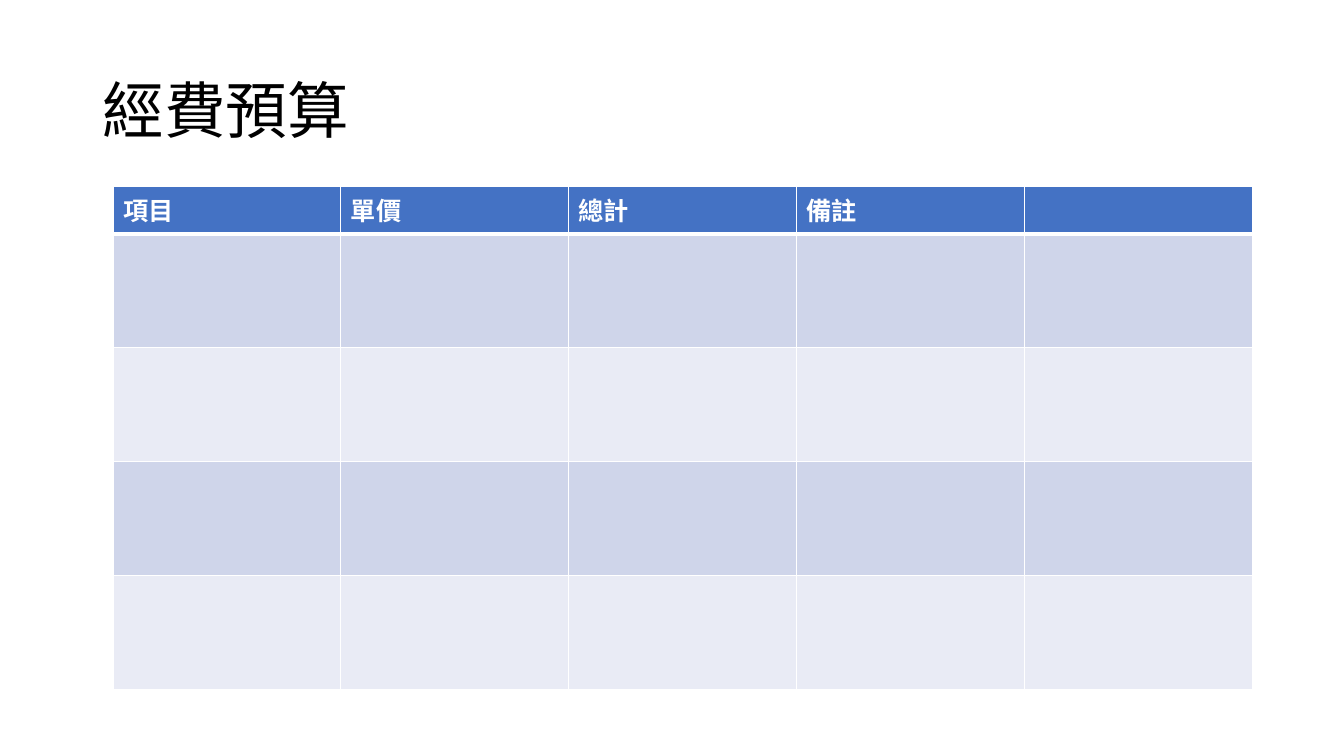
from dataclasses import dataclass

from lxml import etree
from pptx import Presentation
from pptx import util as u
from pptx.dml.color import RGBColor
from pptx.enum import text
from pptx.oxml import ns


@dataclass(frozen=True)
class Theme:
    font: str = "Calibri"
    title_size: int = 44
    table_size: int = 18
    ink: str = "000000"
    white: str = "FFFFFF"
    header_fill: str = "4472C4"
    band_fills: tuple = ("CFD5EA", "E9EBF5")
    thin_rule: int = 1
    header_rule: int = 3


class BudgetSlide:
    def __init__(self, slide, theme):
        self.slide = slide
        self.theme = theme

    def add_run(self, paragraph, wording, size, color, bold=False):
        run = paragraph.add_run()
        run.text = wording
        run.font.name = self.theme.font
        run.font.size = u.Pt(size)
        run.font.bold = bold
        run.font.color.rgb = RGBColor.from_string(color)

    def add_title(self, wording, left, top, width, height):
        box = self.slide.shapes.add_textbox(
            u.Inches(left), u.Inches(top), u.Inches(width), u.Inches(height))
        frame = box.text_frame
        frame.word_wrap = True
        frame.vertical_anchor = text.MSO_ANCHOR.MIDDLE
        heading = frame.paragraphs[0]
        heading.line_spacing = 0.9
        self.add_run(heading, wording, self.theme.title_size, self.theme.ink)

    def add_border(self, cell, side, points):
        """Rule one side of a cell; side is L, R, T or B, in that order."""
        line = etree.SubElement(cell._tc.get_or_add_tcPr(), ns.qn(f"a:ln{side}"),
                                w=str(u.Pt(points)))
        fill = etree.SubElement(line, ns.qn("a:solidFill"))
        etree.SubElement(fill, ns.qn("a:srgbClr"), val=self.theme.white)

    def style_cell(self, cell, row):
        """Borders go in before the fill, as the schema orders them."""
        theme = self.theme
        rules = {side: theme.thin_rule for side in "LRTB"}
        if row < 2:
            rules["B" if row == 0 else "T"] = theme.header_rule
        for side, points in rules.items():
            self.add_border(cell, side, points)
        color = theme.band_fills[(row - 1) % 2] if row else theme.header_fill
        cell.fill.solid()
        cell.fill.fore_color.rgb = RGBColor.from_string(color)

    def add_budget_table(self, headings, left, top, column_width, row_heights):
        budget = self.slide.shapes.add_table(
            len(row_heights), len(headings), u.Inches(left), u.Inches(top),
            u.Inches(column_width * len(headings)),
            u.Inches(sum(row_heights))).table
        for column in budget.columns:
            column.width = u.Inches(column_width)
        for index, height in enumerate(row_heights):
            budget.rows[index].height = u.Inches(height)
            for cell in budget.rows[index].cells:
                self.style_cell(cell, index)
        for cell, heading in zip(budget.rows[0].cells, headings):
            if heading:
                self.add_run(cell.text_frame.paragraphs[0], heading,
                             self.theme.table_size, self.theme.white, bold=True)


def main():
    deck = Presentation()
    deck.slide_width = u.Inches(13.33)
    deck.slide_height = u.Inches(7.5)
    page = BudgetSlide(deck.slides.add_slide(deck.slide_layouts[6]), Theme())
    page.add_title("經費預算", 0.92, 0.4, 11.5, 1.45)
    page.add_budget_table(["項目", "單價", "總計", "備註", ""],
                          left=1.12, top=1.85, column_width=2.26,
                          row_heights=[0.47] + [1.13] * 4)
    deck.save("out.pptx")


if __name__ == "__main__":
    main()
